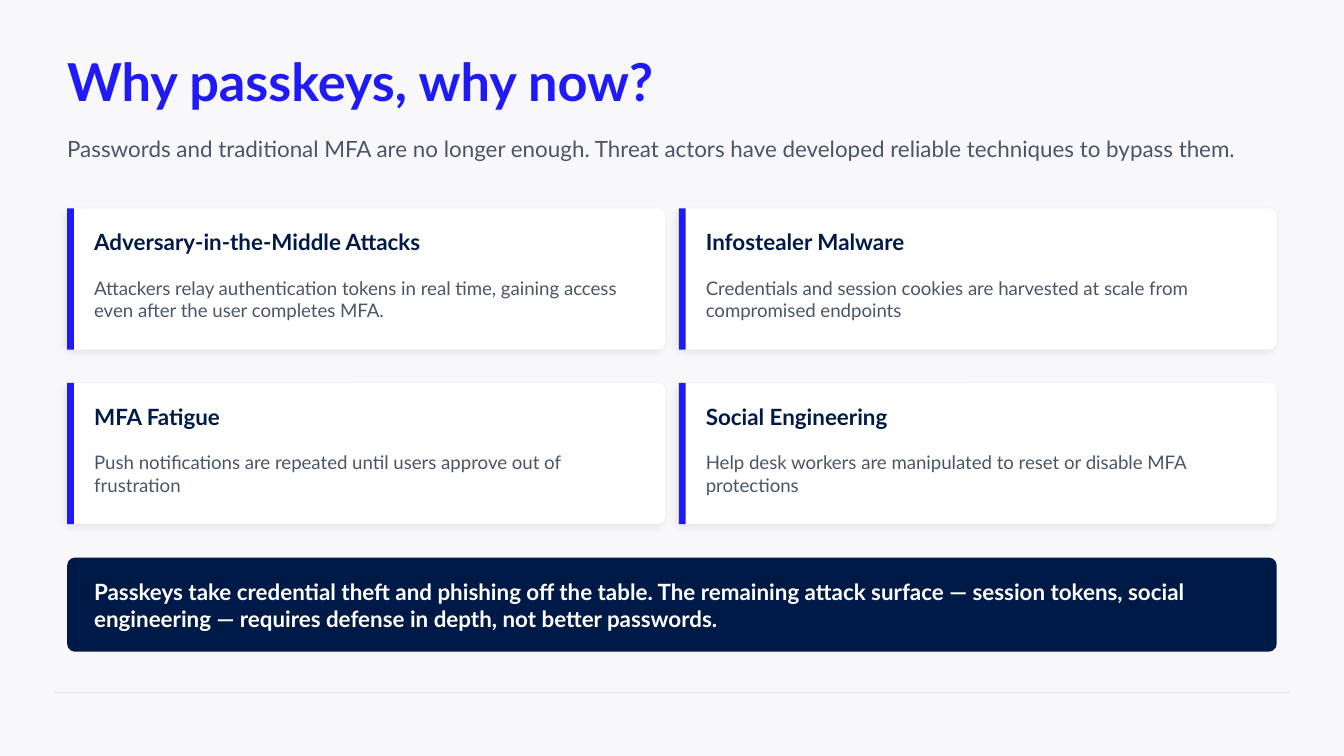
from lxml import etree
from pptx import Presentation
from pptx.dml.color import RGBColor
from pptx.enum.shapes import MSO_CONNECTOR, MSO_SHAPE
from pptx.enum.text import MSO_ANCHOR, MSO_AUTO_SIZE, PP_ALIGN
from pptx.oxml import parse_xml
from pptx.oxml.ns import nsdecls, qn
from pptx.util import Cm, Pt

COLORS = {
    "background": "F8F8FA",
    "accent": "201AF8",
    "navy": "001A47",
    "body": "4A5568",
    "white": "FFFFFF",
    "rule": "E5E7EB",
}
FONT = "Lato"
SHADOW = (
    f'<a:outerShdw {nsdecls("a")} blurRad="{Pt(4)}" dist="{Pt(2)}" dir="8100000" '
    'algn="bl" rotWithShape="0"><a:srgbClr val="000000"><a:alpha val="8000"/>'
    "</a:srgbClr></a:outerShdw>"
)
LEFT, WIDTH = 1.27, 22.86
CARD_W, CARD_H = 11.3, 2.67
CARD_TOP, COL_STEP, ROW_STEP = 3.94, 11.56, 3.3
INDENT = 0.51

CARDS = [
    ("Adversary-in-the-Middle Attacks",
     "Attackers relay authentication tokens in real time, gaining access even after the user completes MFA."),
    ("Infostealer Malware",
     "Credentials and session cookies are harvested at scale from compromised endpoints"),
    ("MFA Fatigue",
     "Push notifications are repeated until users approve out of frustration"),
    ("Social Engineering",
     "Help desk workers are manipulated to reset or disable MFA protections"),
]


def add_text(box, text, x, y, w, h, size, color, bold=False):
    """Fill a text box, or the title placeholder, when box is given; else a new text box."""
    if box is None:
        box = s.shapes.add_textbox(0, 0, 0, 0)
    box.left, box.top, box.width, box.height = Cm(x), Cm(y), Cm(w), Cm(h)
    tf = box.text_frame
    tf.word_wrap = True
    tf.auto_size = MSO_AUTO_SIZE.NONE
    tf.vertical_anchor = MSO_ANCHOR.MIDDLE
    tf.margin_left = tf.margin_right = tf.margin_top = tf.margin_bottom = 0
    p = tf.paragraphs[0]
    p.alignment = PP_ALIGN.LEFT
    r = p.add_run()
    r.text = text
    r.font.name = FONT
    r.font.size = Pt(size)
    r.font.bold = bold
    r.font.color.rgb = RGBColor.from_string(COLORS[color])


def add_panel(kind, x, y, w, h, color):
    sp = s.shapes.add_shape(kind, Cm(x), Cm(y), Cm(w), Cm(h))
    sp.shadow.inherit = False
    sp.fill.solid()
    sp.fill.fore_color.rgb = RGBColor.from_string(COLORS[color])
    sp.line.fill.background()
    if kind == MSO_SHAPE.ROUNDED_RECTANGLE:
        sp.adjustments[0] = 0.15 / h  # same corner radius on every panel
    return sp


prs = Presentation()
prs.slide_width, prs.slide_height = Cm(25.4), Cm(14.29)
s = prs.slides.add_slide(prs.slide_layouts[5])
s.background.fill.solid()
s.background.fill.fore_color.rgb = RGBColor.from_string(COLORS["background"])

# Heading
add_text(s.shapes.title, "Why passkeys, why now?", LEFT, 0.76, WIDTH, 1.52, 28, "accent", True)
add_text(None, "Passwords and traditional MFA are no longer enough. "
         "Threat actors have developed reliable techniques to bypass them.",
         LEFT, 2.29, WIDTH, 1.02, 12, "body")

# Threat cards, two by two
for i, (heading, detail) in enumerate(CARDS):
    row, col = divmod(i, 2)
    x, y = LEFT + col * COL_STEP, CARD_TOP + row * ROW_STEP
    card = add_panel(MSO_SHAPE.ROUNDED_RECTANGLE, x, y, CARD_W, CARD_H, "white")
    card._element.spPr.find(qn("a:effectLst")).append(parse_xml(SHADOW))
    add_panel(MSO_SHAPE.RECTANGLE, x, y, 0.13, CARD_H, "accent")
    add_text(None, heading, x + INDENT, y + 0.25, 10.16, 0.76, 12, "navy", True)
    add_text(None, detail, x + INDENT, y + 1.14, 10.16, 1.14, 10, "body")

# Takeaway banner
add_panel(MSO_SHAPE.ROUNDED_RECTANGLE, LEFT, 10.54, WIDTH, 1.78, "navy")
add_text(None, "Passkeys take credential theft and phishing off the table. "
         "The remaining attack surface — session tokens, social engineering — "
         "requires defense in depth, not better passwords.",
         LEFT + INDENT, 10.54, WIDTH - 2 * INDENT, 1.78, 12, "white", True)

# Footer rule
rule = s.shapes.add_connector(MSO_CONNECTOR.STRAIGHT, Cm(1.02), Cm(13.08), Cm(24.38), Cm(13.08))
rule.line.color.rgb = RGBColor.from_string(COLORS["rule"])
rule.line.width = Pt(0.5)
etree.SubElement(rule._element.spPr, qn("a:effectLst"))

prs.save("out.pptx")
